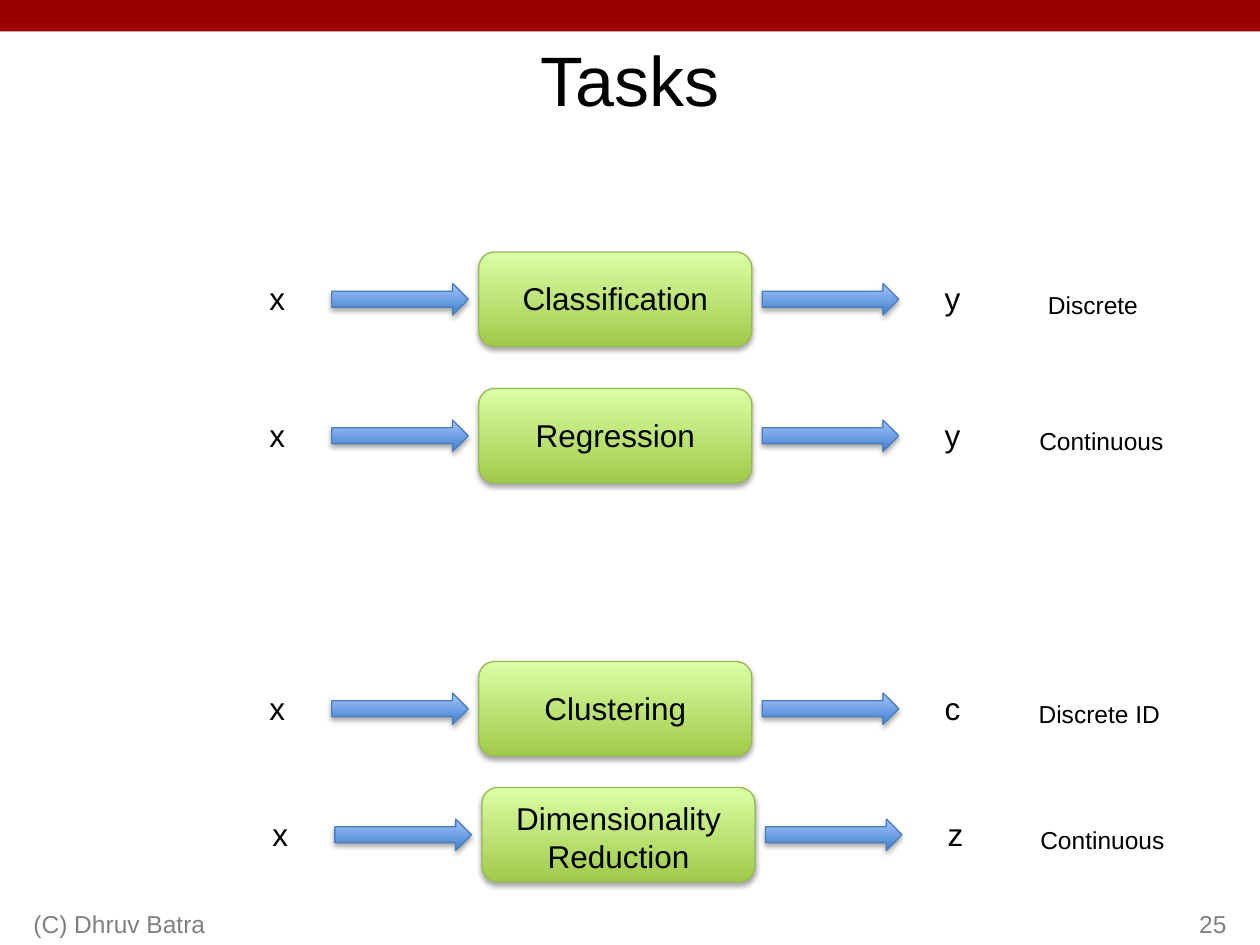
from lxml import etree
from pptx import Presentation
from pptx.dml.color import RGBColor
from pptx.enum.shapes import MSO_SHAPE
from pptx.enum.text import MSO_ANCHOR, MSO_AUTO_SIZE, PP_ALIGN
from pptx.oxml import parse_xml
from pptx.oxml.ns import nsdecls
from pptx.util import Emu, Pt

PX = 914400 // 120  # EMU per px, 120 px to the inch
color = RGBColor.from_string
SHADOW = (
    f'<a:effectLst {nsdecls("a")}>'
    '<a:outerShdw blurRad="39370" dist="22860" dir="5400000" rotWithShape="0">'
    '<a:srgbClr val="000000"><a:alpha val="35000"/></a:srgbClr>'
    '</a:outerShdw></a:effectLst>'
)

presentation = Presentation()
presentation.slide_width = Emu(1200 * PX)
presentation.slide_height = Emu(900 * PX)
slide = presentation.slides.add_slide(presentation.slide_layouts[5])


def write_text(shape, text, size, align=PP_ALIGN.CENTER, hex_color="000000",
               anchor=MSO_ANCHOR.TOP, wrap=True, grow=True):
    frame = shape.text_frame
    frame.word_wrap = wrap
    frame.auto_size = MSO_AUTO_SIZE.SHAPE_TO_FIT_TEXT if grow else MSO_AUTO_SIZE.NONE
    frame.vertical_anchor = anchor
    paragraph = frame.paragraphs[0]
    paragraph.alignment = align
    for index, line in enumerate(text.split("\n")):
        if index:
            paragraph.add_line_break()
        run = paragraph.add_run()
        run.text = line
        run.font.name = "Arial"
        run.font.size = Pt(size)
        run.font.color.rgb = color(hex_color)


def add_gradient_shape(kind, left, top, width, height, bottom, upper, border):
    shape = slide.shapes.add_shape(kind, *[Emu(n * PX) for n in (left, top, width, height)])
    shape.fill.gradient()
    shape.fill.gradient_angle = 90
    for stop, position, hex_color in zip(shape.fill.gradient_stops, (0, 1), (bottom, upper)):
        stop.position = position
        stop.color.rgb = color(hex_color)
    shape.line.color.rgb = color(border)
    shape.line.width = Pt(0.75)
    shape.element.spPr.append(parse_xml(SHADOW))


# Top banner
banner = slide.shapes.add_shape(MSO_SHAPE.RECTANGLE, 0, 0, Emu(1200 * PX), Emu(30 * PX))
banner.shadow.inherit = False
banner.fill.solid()
banner.fill.fore_color.rgb = color("990000")
banner.line.fill.background()

# Title
title = slide.shapes.title
title.left, title.top, title.width, title.height = [Emu(n * PX) for n in (90, 30, 1020, 90)]
write_text(title, "Tasks", 40, anchor=MSO_ANCHOR.MIDDLE, grow=False)

# Footer and slide number
for text, left, width, align in [
    ("(C) Dhruv Batra", 20, 380, PP_ALIGN.LEFT),
    ("25", 930, 250, PP_ALIGN.RIGHT),
]:
    box = slide.shapes.add_textbox(*[Emu(n * PX) for n in (left, 840, width, 60)])
    write_text(box, text, 14, align, "808080", MSO_ANCHOR.BOTTOM, grow=False)

# Task rows: top, shift to the right, task, output, kind of output, its left and width
tasks = [
    (240, 0, "Classification", "y", "Discrete", 986, 110),
    (370, 0, "Regression", "y", "Continuous", 977, 144),
    (630, 0, "Clustering", "c", "Discrete ID", 977, 140),
    (750, 3, "Dimensionality\nReduction", "z", "Continuous", 978, 144),
]
for top, shift, task, output, output_kind, kind_left, kind_width in tasks:
    # Task box and the arrows into and out of it
    add_gradient_shape(MSO_SHAPE.ROUNDED_RECTANGLE, 456 + shift, top, 260, 90,
                       "A0CA4A", "DAFFA5", "98B955")
    for arrow_left in (316, 726):
        add_gradient_shape(MSO_SHAPE.RIGHT_ARROW, arrow_left + shift, top + 30, 130, 30,
                           "3F80CE", "A4C4FF", "4B7EBC")

    # Task name, input, output and kind of output
    name_offset, name_height = (5, 85) if "\n" in task else (20, 48)
    for text, left, offset, width, height, size, wrap in [
        (task, 456 + shift, name_offset, 260, name_height, 18, True),
        ("x", 244 + shift, 20, 40, 48, 18, False),
        (output, 887 + shift, 20, 40, 48, 18, False),
        (output_kind, kind_left, 30, kind_width, 41, 14, False),
    ]:
        box = slide.shapes.add_textbox(*[Emu(n * PX) for n in (left, top + offset, width, height)])
        write_text(box, text, size, wrap=wrap)

presentation.save("out.pptx")
